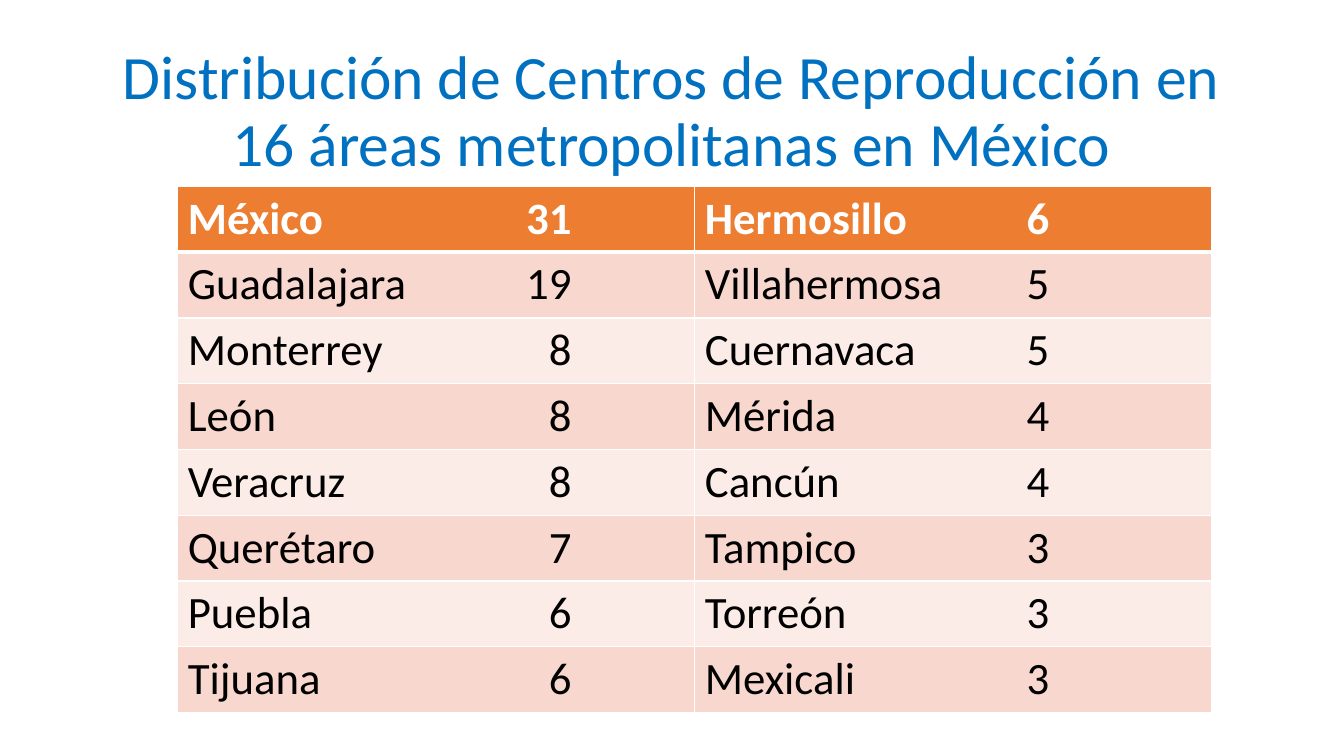
"""Build a slide with a table of reproduction centres by metropolitan area in Mexico."""
from lxml.etree import SubElement
from pptx import Presentation
from pptx.dml.color import RGBColor
from pptx.enum.text import MSO_ANCHOR as Anchor, PP_ALIGN as Align
from pptx.oxml.ns import qn
from pptx.util import Cm, Pt

TITLE = "Distribución de Centros de Reproducción en 16 áreas metropolitanas en México"
CENTRES = [
    [("México", 31), ("Guadalajara", 19), ("Monterrey", 8), ("León", 8),
     ("Veracruz", 8), ("Querétaro", 7), ("Puebla", 6), ("Tijuana", 6)],
    [("Hermosillo", 6), ("Villahermosa", 5), ("Cuernavaca", 5), ("Mérida", 4),
     ("Cancún", 4), ("Tampico", 3), ("Torreón", 3), ("Mexicali", 3)],
]
NUMBER_TABS = [Cm(9.67), Cm(8.68)]
HEADER_FILL = "ED7D31"
BAND_FILLS = ["FCECE8", "F8D7CE"]
BORDER = "FFFFFF"
TITLE_FONT = {"name": "Calibri", "size": Pt(44), "bold": False}
CELL_FONT = {"name": "Calibri", "size": Pt(32)}


def paint(color_format, value):
    color_format.rgb = RGBColor.from_string(value)


def write(paragraph, text, font, color):
    run = paragraph.add_run()
    run.text = text
    for name, value in font.items():
        setattr(run.font, name, value)
    paint(run.font.color, color)


def add_number_tab(paragraph, position):
    tabs = SubElement(paragraph._p.get_or_add_pPr(), qn("a:tabLst"))
    SubElement(tabs, qn("a:tab"), pos=str(position), algn="r")


def add_borders(cell, widths):
    properties = cell._tc.get_or_add_tcPr()
    for side, width in widths.items():
        line = SubElement(properties, qn(f"a:ln{side}"), w=str(Pt(width)))
        fill = SubElement(line, qn("a:solidFill"))
        SubElement(fill, qn("a:srgbClr"), val=BORDER)


def add_title(slide):
    frame = slide.shapes.add_textbox(Cm(2.33), Cm(1.01), Cm(29.21), Cm(3.68)).text_frame
    frame.word_wrap = True
    frame.vertical_anchor = Anchor.MIDDLE
    paragraph = frame.paragraphs[0]
    paragraph.alignment = Align.CENTER
    paragraph.line_spacing = 0.9
    write(paragraph, TITLE, TITLE_FONT, "0070C0")


def add_centres(slide):
    row_count = len(CENTRES[0])
    table = slide.shapes.add_table(row_count, len(CENTRES), Cm(4.48), Cm(4.7),
                                   Cm(26.06), Cm(13.26)).table
    table.horz_banding = False
    for column, centres in enumerate(CENTRES):
        for row, (city, count) in enumerate(centres):
            header = row == 0
            cell = table.cell(row, column)
            add_borders(cell, {"L": 1, "R": 1, "T": 3 if row == 1 else 1,
                               "B": 3 if header else 1})
            cell.fill.solid()
            paint(cell.fill.fore_color, HEADER_FILL if header else BAND_FILLS[row % 2])
            paragraph = cell.text_frame.paragraphs[0]
            add_number_tab(paragraph, NUMBER_TABS[column])
            write(paragraph, f"{city}\t{count}", {**CELL_FONT, "bold": header},
                  "FFFFFF" if header else "000000")


def main():
    presentation = Presentation()
    presentation.slide_width, presentation.slide_height = Cm(33.87), Cm(19.05)
    slide = presentation.slides.add_slide(presentation.slide_layouts[6])
    add_title(slide)
    add_centres(slide)
    presentation.save("out.pptx")


if __name__ == "__main__":
    main()
